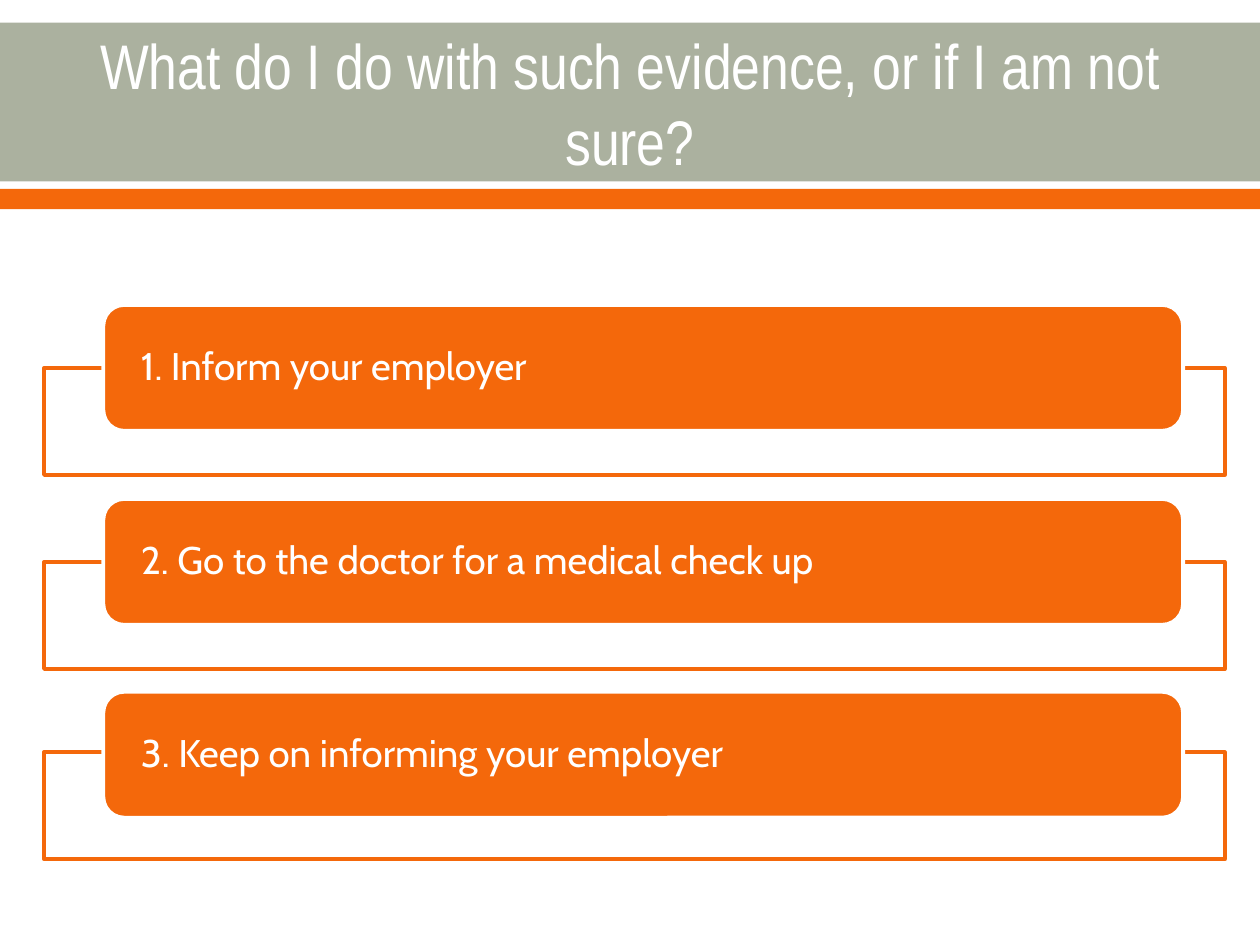
from pptx import Presentation
from pptx.dml.color import RGBColor
from pptx.enum.shapes import MSO_SHAPE
from pptx.enum.text import MSO_ANCHOR, MSO_AUTO_SIZE, PP_ALIGN
from pptx.util import Inches, Pt

ORANGE = RGBColor(0xF4, 0x68, 0x0B)
SAGE = RGBColor(0xAB, 0xB1, 0x9F)
WHITE = RGBColor(0xFF, 0xFF, 0xFF)

# Content
TITLE = "What do I do with such evidence, or if I am not sure?"
# Step text, top of its bar, top of the frame behind it
STEPS = [
    ("1. Inform your employer", 2.42, 2.92),
    ("2. Go to the doctor for a medical check up", 3.96, 4.46),
    ("3. Keep on informing your employer", 5.49, 5.97),
]
# Top, height, colour
BANDS = [(0.18, 1.26, SAGE), (1.5, 0.16, ORANGE)]


def add_box(slide, kind, left, top, width, height, fill, line=None):
    box = slide.shapes.add_shape(
        kind, Inches(left), Inches(top), Inches(width), Inches(height))
    box.shadow.inherit = False
    box.fill.solid()
    box.fill.fore_color.rgb = fill
    if line is None:
        box.line.fill.background()
    else:
        box.line.color.rgb = line
        box.line.width = Pt(2.22)
    return box


def add_step(slide, text, bar_top, frame_top):
    add_box(slide, MSO_SHAPE.RECTANGLE, 0.35, frame_top, 9.37, 0.85, WHITE, ORANGE)
    bar = add_box(slide, MSO_SHAPE.ROUNDED_RECTANGLE, 0.82, bar_top, 8.57, 1, ORANGE, WHITE)
    frame = bar.text_frame
    frame.word_wrap = True
    frame.vertical_anchor = MSO_ANCHOR.MIDDLE
    frame.margin_left = frame.margin_right = Inches(0.25)
    frame.margin_top = frame.margin_bottom = 0
    para = frame.paragraphs[0]
    para.text = text
    para.alignment = PP_ALIGN.LEFT
    para.line_spacing = 0.9
    para.font.name = "Cabin"
    para.font.size = Pt(22)
    para.font.color.rgb = WHITE


def add_title(slide):
    title = slide.shapes.title
    title.left, title.top = Inches(0.5), Inches(0.2)
    title.width, title.height = Inches(9), Inches(1.22)
    frame = title.text_frame
    frame.word_wrap = True
    frame.auto_size = MSO_AUTO_SIZE.NONE
    frame.vertical_anchor = MSO_ANCHOR.MIDDLE
    para = frame.paragraphs[0]
    para.text = TITLE
    para.alignment = PP_ALIGN.CENTER
    para.font.name = "Arial Narrow"
    para.font.size = Pt(36)
    para.font.color.rgb = WHITE
    # Bring the title in front of the bands
    slide.shapes._spTree.append(title._element)


def main():
    deck = Presentation()
    deck.slide_width, deck.slide_height = Inches(10), Inches(7.5)
    slide = deck.slides.add_slide(deck.slide_layouts[5])

    # Header
    for top, height, color in BANDS:
        add_box(slide, MSO_SHAPE.RECTANGLE, 0, top, 10, height, color)
    add_title(slide)

    # Steps
    for text, bar_top, frame_top in STEPS:
        add_step(slide, text, bar_top, frame_top)

    deck.save("out.pptx")


if __name__ == "__main__":
    main()
